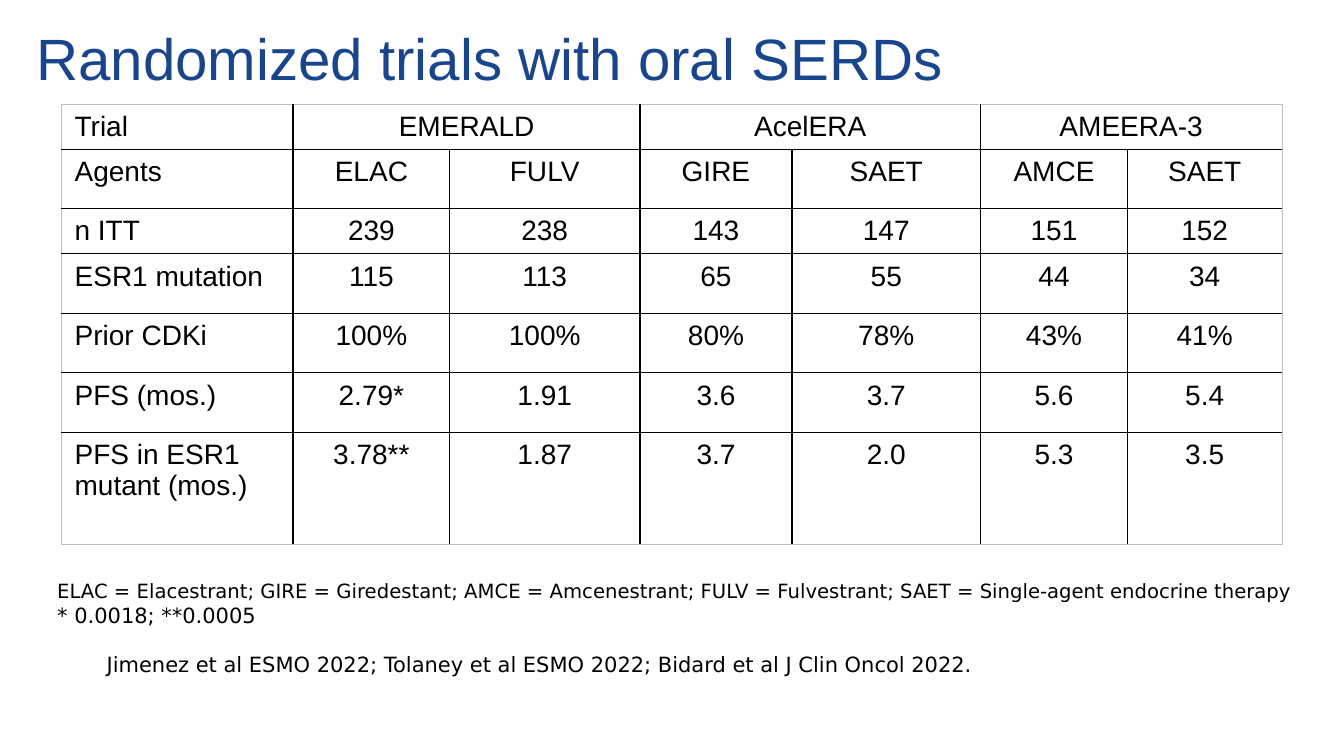
from dataclasses import dataclass
from typing import Any

from lxml import etree
from pptx import Presentation
from pptx.dml.color import RGBColor
from pptx.enum import text as t
from pptx.oxml import ns
from pptx.util import Pt

BLACK = RGBColor(0x00, 0x00, 0x00)
GREY = RGBColor(0xBF, 0xBF, 0xBF)
NAVY = RGBColor(0x19, 0x45, 0x8D)

COLUMN_WIDTHS = (165.6, 111.6, 136, 108.7, 134.6, 105.1, 110.2)
ROW_HEIGHTS = (24, 42.5, 24, 42.5, 42.5, 42.5, 80)
TRIALS = ("Trial", "EMERALD", "", "AcelERA", "", "AMEERA-3", "")
RESULTS = (
    TRIALS,
    ("Agents", "ELAC", "FULV", "GIRE", "SAET", "AMCE", "SAET"),
    ("n ITT", "239", "238", "143", "147", "151", "152"),
    ("ESR1 mutation", "115", "113", "65", "55", "44", "34"),
    ("Prior CDKi", "100%", "100%", "80%", "78%", "43%", "41%"),
    ("PFS (mos.)", "2.79*", "1.91", "3.6", "3.7", "5.6", "5.4"),
    ("PFS in ESR1 mutant (mos.)", "3.78**", "1.87", "3.7", "2.0", "5.3", "3.5"),
)
CELL_FORMAT = {
    "margin_left": Pt(9.4),
    "margin_right": Pt(9.4),
    "margin_top": Pt(5),
    "margin_bottom": Pt(5),
    "vertical_anchor": t.MSO_ANCHOR.TOP,
}
TITLE_FORMAT = {
    "margin_left": 0,
    "margin_right": 0,
    "margin_top": 0,
    "margin_bottom": 0,
    "word_wrap": True,
    "auto_size": t.MSO_AUTO_SIZE.NONE,
    "vertical_anchor": t.MSO_ANCHOR.BOTTOM,
}


@dataclass(frozen=True)
class Line:
    text: str
    size: float


@dataclass(frozen=True)
class Note:
    left: float
    top: float
    width: float
    height: float
    wrap: bool
    lines: tuple[Line, ...]


NOTES = (
    Note(33.8, 409.7, 925.9, 42.5, True, (
        Line("ELAC = Elacestrant; GIRE = Giredestant; AMCE = Amcenestrant; "
             "FULV = Fulvestrant; SAET = Single-agent endocrine therapy", 14),
        Line("* 0.0018; **0.0005", 15),
    )),
    Note(69.1, 461.5, 658.8, 25.2, False, (
        Line("Jimenez et al ESMO 2022; Tolaney et al ESMO 2022; "
             "Bidard et al J Clin Oncol 2022.", 15),
    )),
)


def apply(target: Any, values: dict[str, Any]) -> None:
    for name, value in values.items():
        setattr(target, name, value)


def style_font(font: Any, name: str, size: float, color: RGBColor) -> None:
    apply(font, {"name": name, "size": Pt(size), "bold": False})
    font.color.rgb = color


def draw_border(cell: Any, side: str, width: float, color: RGBColor) -> None:
    properties = cell._tc.get_or_add_tcPr()
    border = etree.SubElement(properties, ns.qn(f"a:ln{side}"), w=str(Pt(width)))
    fill = etree.SubElement(border, ns.qn("a:solidFill"))
    etree.SubElement(fill, ns.qn("a:srgbClr"), val=str(color))


def draw_borders(cell: Any, row: int, column: int) -> None:
    right = column + cell.span_width if cell.is_merge_origin else column + 1
    edges = (
        ("L", column, len(COLUMN_WIDTHS)),
        ("R", right, len(COLUMN_WIDTHS)),
        ("T", row, len(ROW_HEIGHTS)),
        ("B", row + 1, len(ROW_HEIGHTS)),
    )
    for side, position, last in edges:
        if position in (0, last):
            draw_border(cell, side, 0.5, GREY)
        else:
            after_labels = side in "LR" and position == 1
            draw_border(cell, side, 1.5 if after_labels else 1, BLACK)


def draw_title(slide: Any, wording: str) -> None:
    title = slide.shapes.title
    apply(title, {"left": Pt(25.9), "top": Pt(19.4),
                  "width": Pt(828), "height": Pt(46.8)})
    apply(title.text_frame, TITLE_FORMAT)
    title.text_frame.text = wording
    paragraph = title.text_frame.paragraphs[0]
    apply(paragraph, {"alignment": t.PP_ALIGN.LEFT, "line_spacing": 0.85})
    style_font(paragraph.font, "Arial", 41.6, NAVY)


def draw_results(slide: Any) -> None:
    table = slide.shapes.add_table(
        len(RESULTS), len(TRIALS), Pt(43.9), Pt(74.2),
        Pt(sum(COLUMN_WIDTHS)), Pt(sum(ROW_HEIGHTS))).table
    apply(table, {"first_row": False, "horz_banding": False})
    for column, width in zip(table.columns, COLUMN_WIDTHS):
        column.width = Pt(width)
    for row, height in zip(table.rows, ROW_HEIGHTS):
        row.height = Pt(height)
    for start in range(1, len(TRIALS), 2):
        table.cell(0, start).merge(table.cell(0, start + 1))
    for row, values in enumerate(RESULTS):
        for column, value in enumerate(values):
            cell = table.cell(row, column)
            apply(cell, CELL_FORMAT)
            draw_borders(cell, row, column)
            cell.fill.background()
            cell.text = value
            paragraph = cell.text_frame.paragraphs[0]
            paragraph.alignment = t.PP_ALIGN.CENTER if column else t.PP_ALIGN.LEFT
            style_font(paragraph.font, "Arial", 20, BLACK)


def draw_note(slide: Any, note: Note) -> None:
    frame = slide.shapes.add_textbox(
        Pt(note.left), Pt(note.top), Pt(note.width), Pt(note.height)).text_frame
    apply(frame, {"word_wrap": note.wrap,
                  "auto_size": t.MSO_AUTO_SIZE.SHAPE_TO_FIT_TEXT})
    frame.text = "\n".join(line.text for line in note.lines)
    for paragraph, line in zip(frame.paragraphs, note.lines):
        style_font(paragraph.font, "DejaVu Sans", line.size, BLACK)


def main() -> None:
    deck = Presentation()
    apply(deck, {"slide_width": Pt(960), "slide_height": Pt(540)})
    slide = deck.slides.add_slide(deck.slide_layouts.get_by_name("Title Only"))
    draw_title(slide, "Randomized trials with oral SERDs")
    draw_results(slide)
    for note in NOTES:
        draw_note(slide, note)
    deck.save("out.pptx")


if __name__ == "__main__":
    main()
